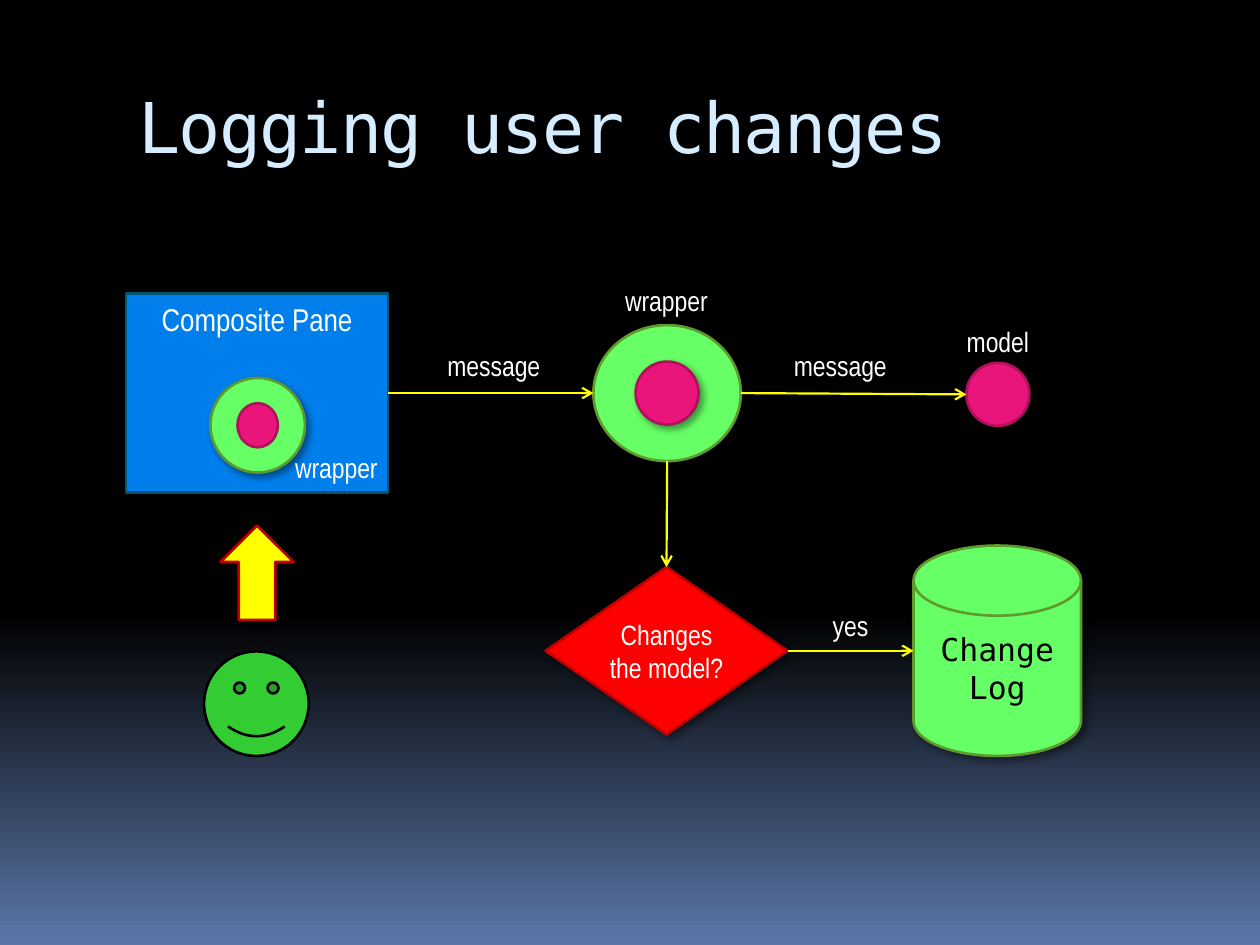
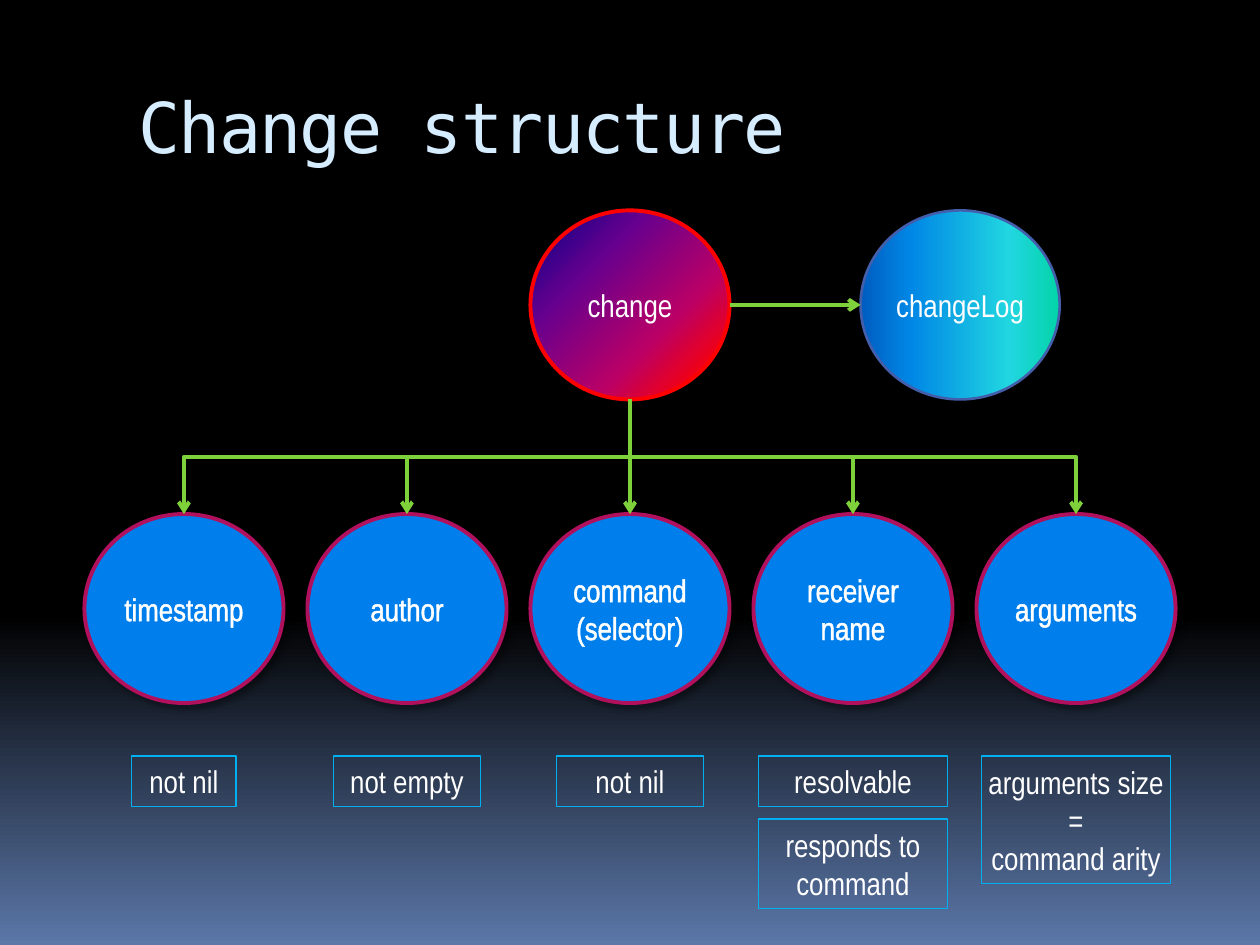
from dataclasses import dataclass

from lxml import etree
from pptx import Presentation
from pptx.dml.color import RGBColor
from pptx.enum.shapes import MSO_CONNECTOR, MSO_SHAPE
from pptx.enum.text import MSO_ANCHOR, MSO_AUTO_SIZE, PP_ALIGN
from pptx.oxml.ns import qn
from pptx.util import Inches, Pt

ELLIPSE, RECTANGLE = MSO_SHAPE.OVAL, MSO_SHAPE.RECTANGLE
DECISION, DISK = MSO_SHAPE.FLOWCHART_DECISION, MSO_SHAPE.FLOWCHART_MAGNETIC_DISK
UP_ARROW, SMILEY = MSO_SHAPE.UP_ARROW, MSO_SHAPE.SMILEY_FACE
STRAIGHT, ELBOW = MSO_CONNECTOR.STRAIGHT, MSO_CONNECTOR.ELBOW
TOP, MIDDLE = MSO_ANCHOR.TOP, MSO_ANCHOR.MIDDLE
CENTER, LEFT_ALIGN = PP_ALIGN.CENTER, PP_ALIGN.LEFT
FIT_SHAPE = MSO_AUTO_SIZE.SHAPE_TO_FIT_TEXT
TOP_SIDE, LEFT_SIDE, BOTTOM_SIDE, RIGHT_SIDE = range(4)
FOUR_SITED = (RECTANGLE, DECISION)


@dataclass(frozen=True)
class Theme:
    body_font: str = "Arial Narrow"
    mono_font: str = "DejaVu Sans Mono"
    title_size: int = 40
    node_size: int = 18
    label_size: int = 16
    title: str = "D6ECFF"
    white: str = "FFFFFF"
    black: str = "000000"
    blue: str = "007EEB"
    pane_edge: str = "00566E"
    green: str = "66FF66"
    green_edge: str = "5E9B2C"
    pink: str = "EA157A"
    pink_edge: str = "B0105C"
    red: str = "FF0000"
    red_edge: str = "C00000"
    yellow: str = "FFFF00"
    smiley: str = "33CC33"
    structure_arrow: str = "7FD13B"
    condition_edge: str = "00B0F0"
    log_edge: str = "435EAA"
    backdrop: tuple = ((0, "000000"), (65, "000000"), (100, "5B77A8"))
    change: tuple = ((0, "000082"), (30, "66008F"), (65, "BA0066"),
                     (90, "FF0000"), (100, "FF8200"))
    change_log: tuple = ((0, "03D4A8"), (25, "21D6E0"), (75, "0087E6"), (100, "005CBF"))


THEME = Theme()


@dataclass(frozen=True)
class Box:
    left: float
    top: float
    width: float
    height: float

    def inner(self, left, top, width, height):
        return Box(self.left + left, self.top + top, width, height)

    def centered(self, width, height):
        return self.inner((self.width - width) / 2, (self.height - height) / 2, width, height)

    def inches(self):
        return [Inches(n) for n in (self.left, self.top, self.width, self.height)]


def add_child(parent, tag, **attributes):
    return etree.SubElement(parent, qn(tag), {k: str(v) for k, v in attributes.items()})


def paint_gradient(fill, owner, stops, clockwise_angle):
    fill.gradient()
    fill.gradient_angle = (360 - clockwise_angle) % 360
    stop_list = next(owner.iter(qn("a:gsLst")))
    for stop in list(stop_list):
        stop_list.remove(stop)
    for percent, color in stops:
        add_child(add_child(stop_list, "a:gs", pos=percent * 1000), "a:srgbClr", val=color)


def write(shape, text, size, color=THEME.white, font=THEME.body_font,
          anchor=MIDDLE, align=CENTER, insets=(0, 0.05)):
    frame = shape.text_frame
    frame.word_wrap = True
    frame.vertical_anchor = anchor
    frame.margin_left = frame.margin_right = Inches(insets[0])
    frame.margin_top = frame.margin_bottom = Inches(insets[1])
    paragraph = frame.paragraphs[0]
    paragraph.text = text
    paragraph.alignment = align
    paragraph.font.name = font
    paragraph.font.size = Pt(size)
    paragraph.font.color.rgb = RGBColor.from_string(color)
    return paragraph


def outline_text(paragraph, color, width):
    for run in paragraph.runs:
        outline = etree.Element(qn("a:ln"), w=str(Pt(width)))
        add_child(add_child(outline, "a:solidFill"), "a:srgbClr", val=color)
        run._r.get_or_add_rPr().insert(0, outline)


def draw(slide, kind, box, fill, edge, edge_width=1.5, shadow=True, angle=0):
    shape = slide.shapes.add_shape(kind, *box.inches())
    if fill is None:
        shape.fill.background()
    elif isinstance(fill, tuple):
        paint_gradient(shape.fill, shape.element, fill, angle)
    else:
        shape.fill.solid()
        shape.fill.fore_color.rgb = RGBColor.from_string(fill)
    shape.line.color.rgb = RGBColor.from_string(edge)
    shape.line.width = Pt(edge_width)
    shape.shadow.inherit = False
    if shadow:
        effects = next(shape.element.iter(qn("a:effectLst")))
        outer = add_child(effects, "a:outerShdw", blurRad=Pt(4), dist=Pt(3),
                          dir=45 * 60000, algn="tl", rotWithShape=0)
        color = add_child(outer, "a:srgbClr", val=THEME.black)
        add_child(color, "a:alpha", val=40000)
    return shape


def label(slide, text, box):
    caption = slide.shapes.add_textbox(*box.inches())
    write(caption, text, THEME.label_size, anchor=TOP, insets=(0, 0))


def side_point(shape, side):
    x_middle = shape.left + shape.width // 2
    y_middle = shape.top + shape.height // 2
    return ((x_middle, shape.top), (shape.left, y_middle),
            (x_middle, shape.top + shape.height),
            (shape.left + shape.width, y_middle))[side]


def style_arrow(arrow, color, width):
    arrow.line.color.rgb = RGBColor.from_string(color)
    arrow.line.width = Pt(width)
    properties = arrow.element.spPr
    add_child(properties.find(qn("a:ln")), "a:tailEnd", type="arrow")
    add_child(properties, "a:effectLst")


def straight_arrow(slide, source, source_side, target, target_side,
                   color=THEME.yellow, width=1.25):
    arrow = slide.shapes.add_connector(
        STRAIGHT, *side_point(source, source_side), *side_point(target, target_side))
    if source.auto_shape_type in FOUR_SITED:
        arrow.begin_connect(source, source_side)
    if target.auto_shape_type in FOUR_SITED:
        arrow.end_connect(target, target_side)
    style_arrow(arrow, color, width)


def branch_arrow(slide, parent, child):
    start_x, start_y = side_point(parent, BOTTOM_SIDE)
    end_x, end_y = side_point(child, TOP_SIDE)
    x_middle, y_middle = (start_x + end_x) // 2, (start_y + end_y) // 2
    half_drop, half_span = (end_y - start_y) // 2, abs(end_x - start_x) // 2
    to_right = end_x > start_x
    reach = -half_drop if to_right else half_drop
    arrow = slide.shapes.add_connector(
        ELBOW, x_middle - reach, y_middle - half_span, x_middle + reach, y_middle + half_span)
    rotation = 270 if to_right else 90
    arrow.element.spPr.find(qn("a:xfrm")).set("rot", str(rotation * 60000))
    style_arrow(arrow, THEME.structure_arrow, 2.25)


def titled_slide(deck, title):
    slide = deck.slides.add_slide(deck.slide_layouts[6])
    paint_gradient(slide.background.fill, slide.element, THEME.backdrop, 90)
    heading = slide.shapes.add_textbox(*Box(1, 0.56, 8.5, 1).inches())
    paragraph = write(heading, title, THEME.title_size, THEME.title, THEME.mono_font,
                      TOP, LEFT_ALIGN, (0.1, 0.1))
    paragraph.runs[0]._r.get_or_add_rPr().set("spc", "-100")
    return slide


def draw_model(slide, box, shadow=True):
    return draw(slide, ELLIPSE, box, THEME.pink, THEME.pink_edge, shadow=shadow)


def draw_wrapper(slide, box, model_width, model_height, model_shadow=True):
    wrapper = draw(slide, ELLIPSE, box, THEME.green, THEME.green_edge)
    draw_model(slide, box.centered(model_width, model_height), model_shadow)
    return wrapper


def composite_pane(slide, box):
    pane = draw(slide, RECTANGLE, box, THEME.blue, THEME.pane_edge)
    write(pane, "Composite Pane", THEME.node_size, anchor=TOP, insets=(0.1, 0.05))
    draw_wrapper(slide, box.inner(0.67, 0.67, 0.75, 0.75), 0.32, 0.35, False)
    label(slide, "wrapper", box.inner(1.17, 1.25, 1, 0.33))
    return pane


def user_input(slide, box):
    draw(slide, UP_ARROW, box.inner(0.13, 0, 0.58, 0.75), THEME.yellow, THEME.red_edge)
    draw(slide, SMILEY, box.inner(0, 1, 0.83, 0.83), THEME.smiley, THEME.black, shadow=False)


def message_flow(slide, box, pane):
    wrapper = draw_wrapper(slide, box.inner(1.63, 0.33, 1.17, 1.08), 0.5, 0.5)
    model = draw_model(slide, box.inner(4.59, 0.63, 0.5, 0.5))
    straight_arrow(slide, pane, RIGHT_SIDE, wrapper, LEFT_SIDE)
    straight_arrow(slide, wrapper, RIGHT_SIDE, model, LEFT_SIDE)
    for text, left, top in (("message", 0.34, 0.52), ("wrapper", 1.71, 0),
                            ("message", 3.09, 0.52), ("model", 4.34, 0.33)):
        label(slide, text, box.inner(left, top, 1, 0.33))
    return wrapper


def change_check(slide, box, wrapper):
    decision = draw(slide, DECISION, box.inner(0, 0.17, 1.92, 1.33), THEME.red, THEME.red_edge)
    write(decision, "Changes the model?", THEME.label_size)
    log = draw(slide, DISK, box.inner(2.92, 0, 1.33, 1.67), THEME.green, THEME.green_edge)
    write(log, "Change\nLog", THEME.node_size, THEME.black, THEME.mono_font, insets=(0.1, 0.05))
    straight_arrow(slide, wrapper, BOTTOM_SIDE, decision, TOP_SIDE)
    straight_arrow(slide, decision, RIGHT_SIDE, log, LEFT_SIDE)
    label(slide, "yes", box.inner(1.92, 0.5, 1, 0.33))


def logging_slide(deck):
    slide = titled_slide(deck, "Logging user changes")
    pane = composite_pane(slide, Box(1, 2.33, 2.08, 1.58))
    wrapper = message_flow(slide, Box(3.08, 2.25, 5.34, 1.42), pane)
    change_check(slide, Box(4.33, 4.33, 4.25, 1.67), wrapper)
    user_input(slide, Box(1.62, 4.17, 0.83, 1.83))


NODE_WIDTH, NODE_HEIGHT = 1.58, 1.5
FIELD_PITCH, CONDITION_GAP = 1.77, 0.1
FIELDS = (
    ("timestamp", 0.83, (("not nil", 0.4),)),
    ("author", 1.17, (("not empty", 0.4),)),
    ("command\n(selector)", 1.17, (("not nil", 0.4),)),
    ("receiver\nname", 1.5, (("resolvable", 0.4), ("responds to\ncommand", 0.71))),
    ("arguments", 1.5, (("arguments size\n=\ncommand arity", 1.01),)),
)


def change_and_log(slide, box):
    change = draw(slide, ELLIPSE, box.inner(0, 0, NODE_WIDTH, NODE_HEIGHT),
                  THEME.change, THEME.red, 2.25, angle=45)
    write(change, "change", THEME.node_size)
    log = draw(slide, ELLIPSE, box.inner(2.62, 0, NODE_WIDTH, NODE_HEIGHT),
               THEME.change_log, THEME.log_edge, shadow=False, angle=180)
    write(log, "changeLog", THEME.node_size)
    straight_arrow(slide, change, RIGHT_SIDE, log, LEFT_SIDE, THEME.structure_arrow, 2.25)
    return change


def field_column(slide, box, name, condition_width, conditions):
    field = draw(slide, ELLIPSE, box.inner(0, 0, NODE_WIDTH, NODE_HEIGHT),
                 THEME.blue, THEME.pink_edge, 2.25)
    outline_text(write(field, name, THEME.node_size), THEME.white, 1.45)
    top = 1.92
    for text, height in conditions:
        place = box.inner((box.width - condition_width) / 2, top, condition_width, height)
        condition = draw(slide, RECTANGLE, place, None, THEME.condition_edge, 0.75, False)
        write(condition, text, THEME.node_size)
        condition.text_frame.auto_size = FIT_SHAPE
        top += height + CONDITION_GAP
    return field


def structure_slide(deck):
    slide = titled_slide(deck, "Change structure")
    change = change_and_log(slide, Box(4.21, 1.67, 4.2, NODE_HEIGHT))
    for column, (name, width, conditions) in enumerate(FIELDS):
        box = Box(0.67 + column * FIELD_PITCH, 4.08, NODE_WIDTH, 3.13)
        branch_arrow(slide, change, field_column(slide, box, name, width, conditions))


def main():
    deck = Presentation()
    deck.slide_width, deck.slide_height = Inches(10), Inches(7.5)
    logging_slide(deck)
    structure_slide(deck)
    deck.save("out.pptx")


if __name__ == "__main__":
    main()
